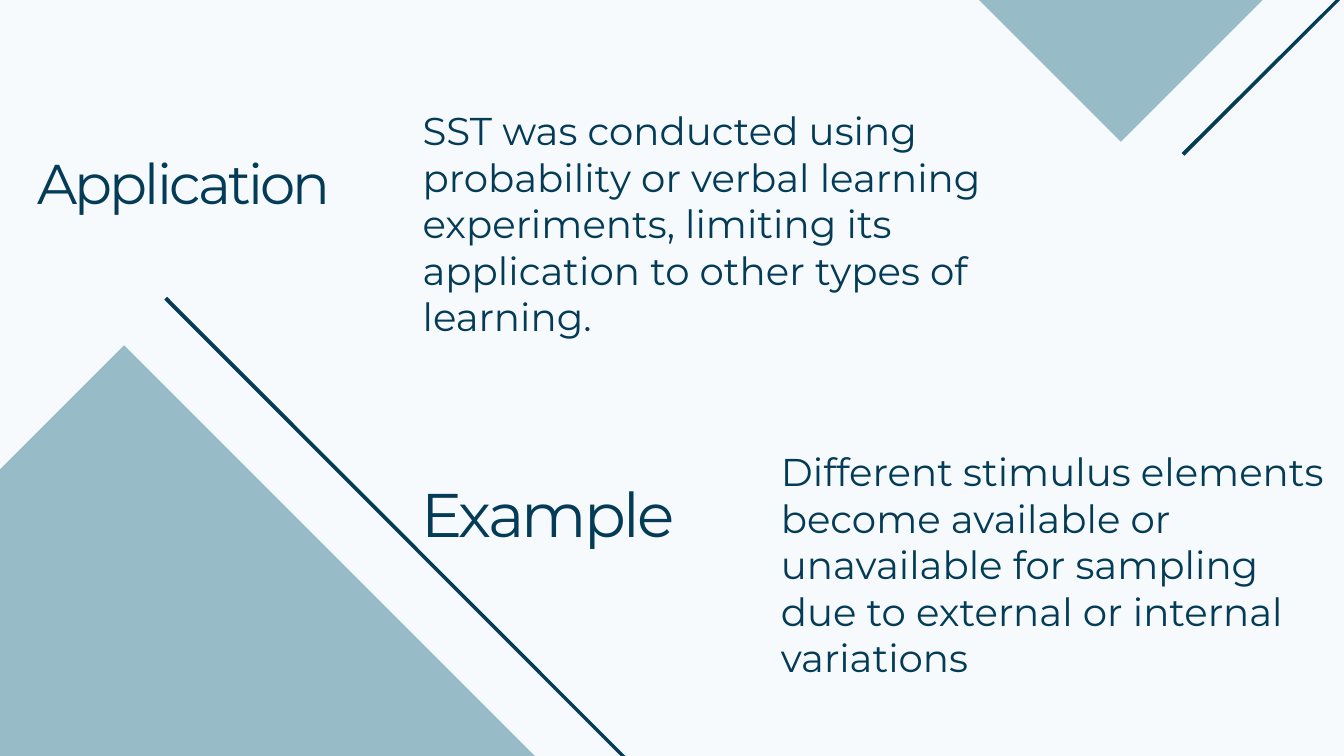
from dataclasses import dataclass

from lxml import etree
from pptx import Presentation
from pptx.dml.color import RGBColor
from pptx.enum.text import MSO_ANCHOR, MSO_AUTO_SIZE, PP_ALIGN
from pptx.oxml.ns import qn
from pptx.util import Pt

ANCHOR_TOP = MSO_ANCHOR.TOP
GROW = MSO_AUTO_SIZE.SHAPE_TO_FIT_TEXT
LEFT = PP_ALIGN.LEFT
WIDTH, HEIGHT = 1440, 810
NAVY, TEAL, PALE = "043C57", "97BCC7", "F7FAFD"
FONT = "Montserrat"


@dataclass(frozen=True)
class TextStyle:
    size: float
    top_inset: float
    indent: float
    spacing: float = 0


@dataclass(frozen=True)
class TextBlock:
    text: str
    left: float
    top: float
    width: float
    height: float
    style: TextStyle
    placeholder: int | None = None


@dataclass(frozen=True)
class Outline:
    points: tuple[tuple[float, float], ...]
    color: str


APPLICATION_HEADING = TextStyle(60, 0.9, 0.9, -3)
EXAMPLE_HEADING = TextStyle(66, 0.9, 0.9, -3)
BODY = TextStyle(41.5, 24.5, 10)

OUTLINES = (
    Outline(((1353, 0), (1201, 152), (1049, 0)), TEAL),
    Outline(((573, HEIGHT), (0, HEIGHT), (0, 503), (133, 370)), TEAL),
    Outline(((1436.4, 0), (1269.4, 167), (1266.5, 164.1), (1430.6, 0)), NAVY),
    Outline(((670.4, HEIGHT), (664.6, HEIGHT), (175.7, 321.1), (178.6, 318.2)), NAVY),
)

TEXT_BLOCKS = (
    TextBlock("Application", 38.9, 158.4, 443.5, 73.4, APPLICATION_HEADING, 0),
    TextBlock(
        "SST was conducted using probability or verbal learning experiments, "
        "limiting its application to other types of learning.",
        442.8, 90, 697, 276.5, BODY, 1,
    ),
    TextBlock(
        "Different stimulus elements become available or unavailable for "
        "sampling due to external or internal variations",
        826.6, 455.8, 591.8, 326.2, BODY,
    ),
    TextBlock("Example", 450.7, 509, 443.5, 80.6, EXAMPLE_HEADING),
)


def set_attributes(target, values: dict) -> None:
    for name, value in values.items():
        setattr(target, name, value)


def color(hex_value: str) -> RGBColor:
    return RGBColor.from_string(hex_value)


def draw_outline(slide, outline: Outline) -> None:
    start, *rest = outline.points
    builder = slide.shapes.build_freeform(*start, scale=Pt(1))
    builder.add_line_segments(rest, close=True)
    shape = builder.convert_to_shape()
    shape.shadow.inherit = False
    shape.fill.solid()
    shape.fill.fore_color.rgb = color(outline.color)
    shape.line.fill.background()


def draw_text(slide, block: TextBlock) -> None:
    frame = {name: Pt(getattr(block, name)) for name in ("left", "top", "width", "height")}
    if block.placeholder is None:
        shape = slide.shapes.add_textbox(**frame)
    else:
        shape = slide.placeholders[block.placeholder]
        set_attributes(shape, frame)
        slide.shapes._spTree.append(shape._element)
    style = block.style
    text_frame = shape.text_frame
    set_attributes(text_frame, {
        "word_wrap": True,
        "auto_size": GROW,
        "vertical_anchor": ANCHOR_TOP,
        "margin_left": 0,
        "margin_top": Pt(style.top_inset),
        "margin_right": 0,
        "margin_bottom": 0,
    })
    paragraph = text_frame.paragraphs[0]
    properties = paragraph._p.get_or_add_pPr()
    properties.set("marL", str(Pt(style.indent)))
    properties.set("indent", "0")
    etree.SubElement(properties, qn("a:buNone"))
    set_attributes(paragraph, {
        "alignment": LEFT,
        "space_before": Pt(0),
        "line_spacing": 1.0,
    })
    run = paragraph.add_run()
    run.text = block.text
    set_attributes(run.font, {"name": FONT, "size": Pt(style.size), "bold": False})
    run.font.color.rgb = color(NAVY)
    if style.spacing:
        run._r.get_or_add_rPr().set("spc", str(round(style.spacing * 100)))


def main() -> None:
    presentation = Presentation()
    set_attributes(presentation, {"slide_width": Pt(WIDTH), "slide_height": Pt(HEIGHT)})
    slide = presentation.slides.add_slide(presentation.slide_layouts[1])
    slide.background.fill.solid()
    slide.background.fill.fore_color.rgb = color(PALE)
    for outline in OUTLINES:
        draw_outline(slide, outline)
    for block in TEXT_BLOCKS:
        draw_text(slide, block)
    presentation.save("out.pptx")


if __name__ == "__main__":
    main()
